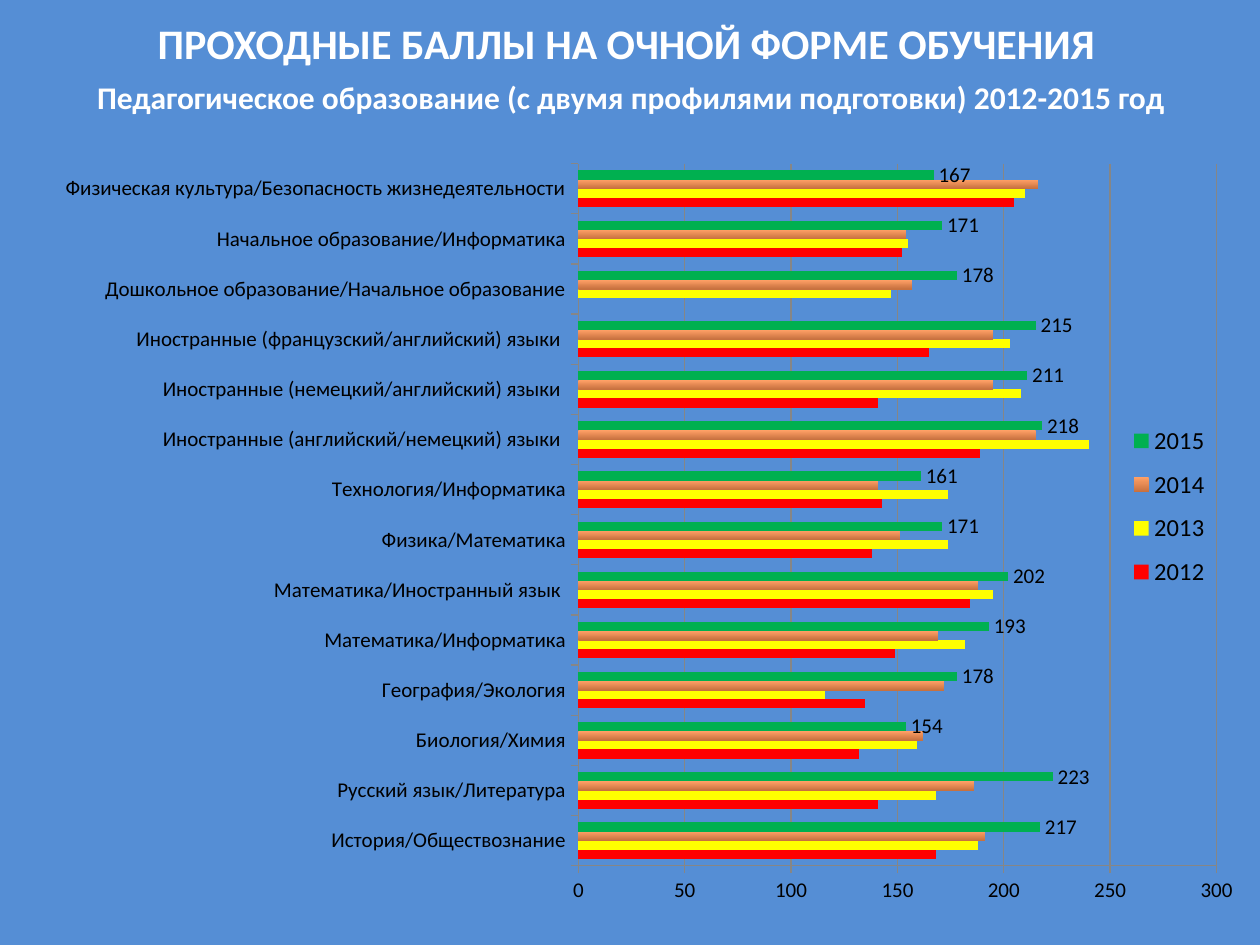
import pptx
import pptx.chart.data
import pptx.dml.color
import pptx.enum.chart
import pptx.enum.text
import pptx.oxml.ns
import pptx.util
from lxml import etree

Pt = pptx.util.Pt
qn = pptx.oxml.ns.qn
FONT = "Calibri"
COLORS = {
    "background": "558ED5", "title": "FFFFFF", "text": "000000", "grid": "868686",
    "2012": "FF0000", "2013": "FFFF00", "2014": "FFA066", "2014 dark": "C8713F",
    "2015": "00B050",
}
TITLE = [
    ("ПРОХОДНЫЕ БАЛЛЫ НА ОЧНОЙ ФОРМЕ ОБУЧЕНИЯ\v ", 24),
    ("Педагогическое образование (с двумя профилями подготовки) 2012-2015 год", 18),
]
YEARS = ["2012", "2013", "2014", "2015"]
SCORES = [
    ("История/Обществознание", 168, 188, 191, 217),
    ("Русский язык/Литература", 141, 168, 186, 223),
    ("Биология/Химия", 132, 159, 162, 154),
    ("География/Экология", 135, 116, 172, 178),
    ("Математика/Информатика", 149, 182, 169, 193),
    ("Математика/Иностранный язык ", 184, 195, 188, 202),
    ("Физика/Математика", 138, 174, 151, 171),
    ("Технология/Информатика", 143, 174, 141, 161),
    ("Иностранные (английский/немецкий) языки ", 189, 240, 215, 218),
    ("Иностранные (немецкий/английский) языки ", 141, 208, 195, 211),
    ("Иностранные (французский/английский) языки ", 165, 203, 195, 215),
    ("Дошкольное образование/Начальное образование", None, 147, 157, 178),
    ("Начальное образование/Информатика", 152, 155, 154, 171),
    ("Физическая культура/Безопасность жизнедеятельности", 205, 210, 216, 167),
]


def color(name):
    return pptx.dml.color.RGBColor.from_string(COLORS[name])


def set_values(target, values):
    for name, value in values.items():
        setattr(target, name, value)


def set_font(font, size, color_name, bold=False):
    set_values(font, {"name": FONT, "size": Pt(size), "bold": bold})
    font.color.rgb = color(color_name)


def add_title(page):
    box = page.shapes.add_textbox(Pt(34), Pt(10), Pt(648), Pt(57))
    set_values(box.text_frame, {
        "word_wrap": True,
        "vertical_anchor": pptx.enum.text.MSO_ANCHOR.MIDDLE,
    })
    para = box.text_frame.paragraphs[0]
    para.alignment = pptx.enum.text.PP_ALIGN.CENTER
    for words, size in TITLE:
        first, *rest = words.split("\v")
        for index, piece in enumerate([first, *rest]):
            if index:
                para.add_line_break()
            span = para.add_run()
            span.text = piece
            set_font(span.font, size, "title", bold=True)


def place(element, position, bounds, inner=False):
    """Give a chart part a manual layout, in fractions of the chart."""
    for old in element.findall(qn("c:layout")):
        element.remove(old)
    layout = etree.Element(qn("c:layout"))
    manual = etree.SubElement(layout, qn("c:manualLayout"))
    settings = {"layoutTarget": "inner"} if inner else {}
    settings |= {"xMode": "edge", "yMode": "edge"}
    settings |= dict(zip("xywh", map(str, bounds)))
    for tag, value in settings.items():
        etree.SubElement(manual, qn(f"c:{tag}"), val=value)
    element.insert(position, layout)


def style_axes(chart):
    for axis in (chart.category_axis, chart.value_axis):
        axis.major_tick_mark = pptx.enum.chart.XL_TICK_MARK.OUTSIDE
        axis.format.line.color.rgb = color("grid")
    set_values(chart.value_axis, {
        "minimum_scale": 0, "maximum_scale": 300, "major_unit": 50,
        "has_major_gridlines": True,
    })
    chart.value_axis.major_gridlines.format.line.color.rgb = color("grid")


def style_series(series):
    series.invert_if_negative = False
    fill = series.format.fill
    if series.name == "2014":
        fill.gradient()
        fill.gradient_angle = 270
        for stop, name in zip(fill.gradient_stops, ("2014", "2014 dark")):
            stop.color.rgb = color(name)
    else:
        fill.solid()
        fill.fore_color.rgb = color(series.name)


def add_scores_chart(page):
    data = pptx.chart.data.CategoryChartData()
    subjects, *columns = zip(*SCORES)
    data.categories = subjects
    for year, values in zip(YEARS, columns):
        data.add_series(year, values)
    chart = page.shapes.add_chart(
        pptx.enum.chart.XL_CHART_TYPE.BAR_CLUSTERED,
        Pt(36.7), Pt(82.8), Pt(675.4), Pt(449.3), data).chart
    set_values(chart, {"has_title": False, "has_legend": True})
    set_font(chart.font, 12, "text")
    style_axes(chart)

    plot = chart.plots[0]
    set_values(plot, {"gap_width": 150, "overlap": 0, "vary_by_categories": False})
    for series in plot.series:
        style_series(series)
    labels = plot.series[-1].data_labels
    set_values(labels, {
        "show_value": True,
        "position": pptx.enum.chart.XL_LABEL_POSITION.OUTSIDE_END,
    })
    set_font(labels.font, 12, "text")

    set_values(chart.legend, {
        "position": pptx.enum.chart.XL_LEGEND_POSITION.RIGHT,
        "include_in_layout": False,
    })
    set_font(chart.legend.font, 14, "text")
    area = chart.element.find(".//" + qn("c:plotArea"))
    place(area, 0, (0.435, 0.024, 0.54, 0.893), inner=True)
    place(chart.element.find(".//" + qn("c:legend")), 1, (0.89, 0.34, 0.09, 0.24))


def main():
    deck = pptx.Presentation()
    set_values(deck, {"slide_width": Pt(720), "slide_height": Pt(540)})
    page = deck.slides.add_slide(deck.slide_layouts[6])
    page.background.fill.solid()
    page.background.fill.fore_color.rgb = color("background")
    add_title(page)
    add_scores_chart(page)
    deck.save("out.pptx")


if __name__ == "__main__":
    main()
